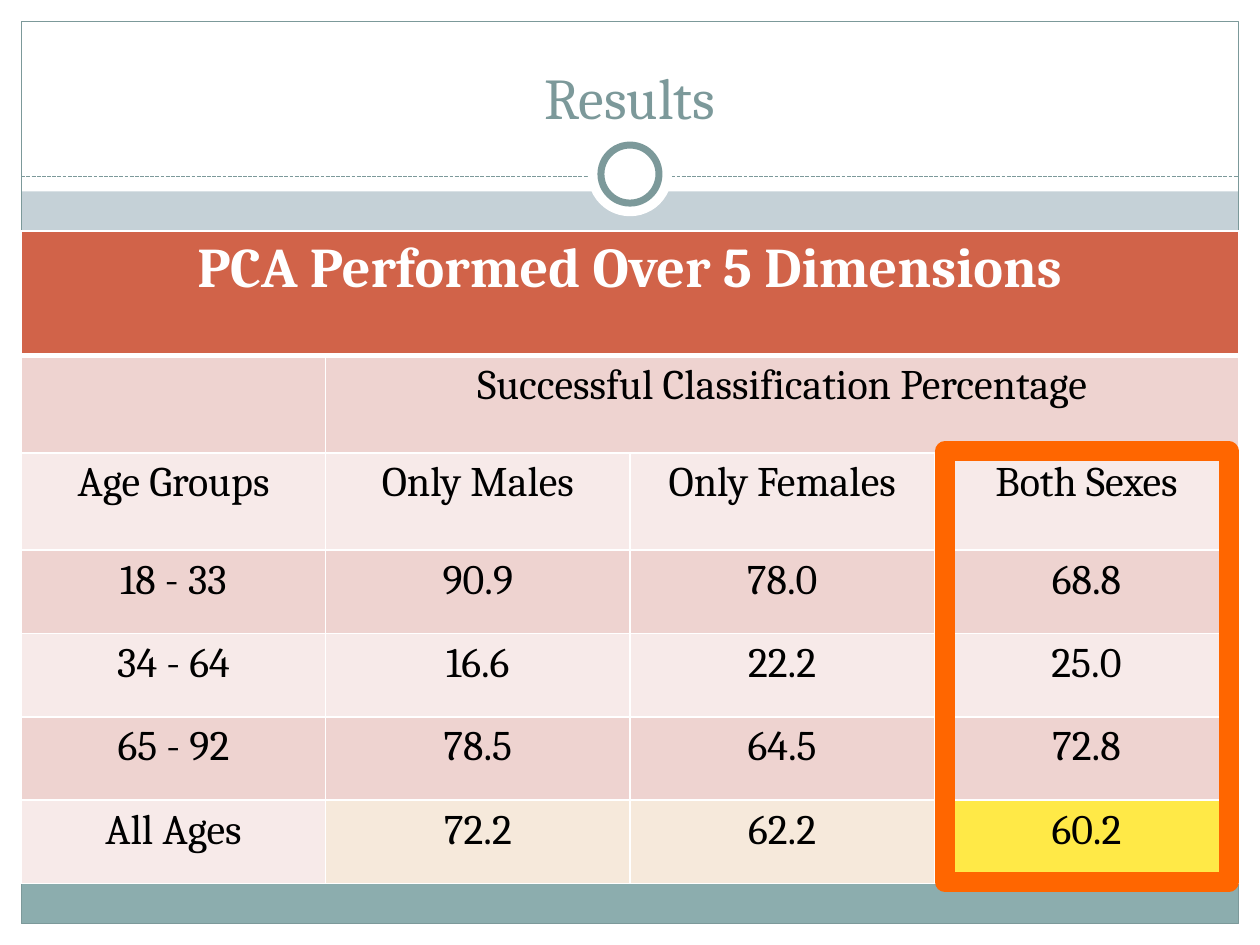
from lxml import etree
from pptx import Presentation
from pptx.dml.color import RGBColor
from pptx.enum.dml import MSO_LINE
from pptx.enum.shapes import MSO_CONNECTOR, MSO_SHAPE
from pptx.enum.text import MSO_ANCHOR, PP_ALIGN
from pptx.oxml.ns import qn
from pptx.util import Cm, Pt

RECT, OVAL = MSO_SHAPE.RECTANGLE, MSO_SHAPE.OVAL
STRAIGHT, DASH = MSO_CONNECTOR.STRAIGHT, MSO_LINE.SQUARE_DOT
CENTER, BOTTOM = PP_ALIGN.CENTER, MSO_ANCHOR.BOTTOM
FONT = "Cambria"
COLORS = {
    "backdrop": "C5D1D7", "white": "FFFFFF", "black": "000000",
    "footer": "8CADAE", "accent": "7C999A", "header": "D16349",
    "dark_band": "EED3D0", "light_band": "F7EAE9", "total": "F6E9DB",
    "best": "FFE947", "highlight": "FF6600",
}

TITLE = "Results"
TABLE_TITLE = "PCA Performed Over 5 Dimensions"
ROWS = [
    [TABLE_TITLE, "", "", ""],
    ["", "Successful Classification Percentage", "", ""],
    ["Age Groups", "Only Males", "Only Females", "Both Sexes"],
    ["18 - 33", "90.9", "78.0", "68.8"],
    ["34 - 64", "16.6", "22.2", "25.0"],
    ["65 - 92", "78.5", "64.5", "72.8"],
    ["All Ages", "72.2", "62.2", "60.2"],
]
ROW_HEIGHTS = [2.51, 1.96, 1.96] + [1.68] * 4
TOTAL_FILLS = ["light_band", "total", "total", "best"]

W, H = 25.4, 19.05
MARGIN = 0.43
INNER_W, INNER_H = W - 2 * MARGIN, H - 2 * MARGIN
RULE_Y = 3.56
RING_Y = 3.51
TABLE_TOP = 4.66

SHAPES = [
    (RECT, 0, H - MARGIN, W, MARGIN, "white", None, 0),
    (RECT, 0, 0, W, 3.86, "white", None, 0),
    (RECT, 0, 0, MARGIN, H, "white", None, 0),
    (RECT, W - MARGIN, 0, MARGIN, H, "white", None, 0),
    (RECT, MARGIN, 17.75, INNER_W, 0.87, "footer", None, 0),
    (RECT, MARGIN, MARGIN, INNER_W, INNER_H, None, "accent", 0.75),
]
RINGS = [(1.7, None, 0), (1.17, "accent", 4)]


def rgb(name):
    return RGBColor.from_string(COLORS[name])


def add_shape(s, kind, x, y, w, h, fill, line, width):
    sp = s.shapes.add_shape(kind, Cm(x), Cm(y), Cm(w), Cm(h))
    sp.shadow.inherit = False
    if fill:
        sp.fill.solid()
        sp.fill.fore_color.rgb = rgb(fill)
    else:
        sp.fill.background()
    if line:
        sp.line.color.rgb = rgb(line)
        sp.line.width = Pt(width)
    else:
        sp.line.fill.background()
    return sp


def write(tf, text, size=24, color="black", bold=False):
    p = tf.paragraphs[0]
    p.alignment = CENTER
    r = p.add_run()
    r.text = text
    r.font.name = FONT
    r.font.size = Pt(size)
    r.font.bold = bold
    r.font.color.rgb = rgb(color)


def add_borders(cell, top, bottom):
    tcPr = cell._tc.get_or_add_tcPr()
    for side, width in (("L", 1), ("R", 1), ("T", top), ("B", bottom)):
        ln = etree.SubElement(tcPr, qn(f"a:ln{side}"), w=str(Pt(width)))
        fill = etree.SubElement(ln, qn("a:solidFill"))
        etree.SubElement(fill, qn("a:srgbClr"), val=COLORS["white"])


def fill_name(row, col):
    if row == 0:
        return "header"
    if row == len(ROWS) - 1:
        return TOTAL_FILLS[col]
    return "dark_band" if row % 2 else "light_band"


def add_results_table(s):
    cols = len(ROWS[0])
    table = s.shapes.add_table(len(ROWS), cols, Cm(MARGIN), Cm(TABLE_TOP),
                               Cm(INNER_W), Cm(sum(ROW_HEIGHTS))).table
    for col in table.columns:
        col.width = Cm(INNER_W / cols)
    for i, values in enumerate(ROWS):
        table.rows[i].height = Cm(ROW_HEIGHTS[i])
        for j, text in enumerate(values):
            cell = table.cell(i, j)
            add_borders(cell, 3 if i == 1 else 1, 3 if i == 0 else 1)
            cell.fill.solid()
            cell.fill.fore_color.rgb = rgb(fill_name(i, j))
            if text and i == 0:
                write(cell.text_frame, text, size=32, color="white", bold=True)
            elif text:
                write(cell.text_frame, text)
    table.cell(0, 0).merge(table.cell(0, cols - 1))
    table.cell(1, 1).merge(table.cell(1, cols - 1))


def main():
    prs = Presentation()
    prs.slide_width, prs.slide_height = Cm(W), Cm(H)
    s = prs.slides.add_slide(prs.slide_layouts[6])
    s.background.fill.solid()
    s.background.fill.fore_color.rgb = rgb("backdrop")

    for shape in SHAPES:
        add_shape(s, *shape)

    rule = s.shapes.add_connector(STRAIGHT, Cm(MARGIN), Cm(RULE_Y),
                                  Cm(W - MARGIN), Cm(RULE_Y))
    rule.line.color.rgb = rgb("accent")
    rule.line.width = Pt(0.75)
    rule.line.dash_style = DASH
    etree.SubElement(rule._element.spPr, qn("a:effectLst"))

    for d, line, width in RINGS:
        add_shape(s, OVAL, (W - d) / 2, RING_Y - d / 2, d, d, "white", line, width)

    title = s.shapes.add_textbox(Cm(0.85), Cm(0.64), Cm(W - 1.7), Cm(2.12))
    title.text_frame.word_wrap = True
    title.text_frame.vertical_anchor = BOTTOM
    write(title.text_frame, TITLE, size=33, color="accent")

    add_results_table(s)
    add_shape(s, RECT, 19.05, 9.1, 5.72, 8.68, None, "highlight", 11.5)

    prs.save("out.pptx")


if __name__ == "__main__":
    main()
